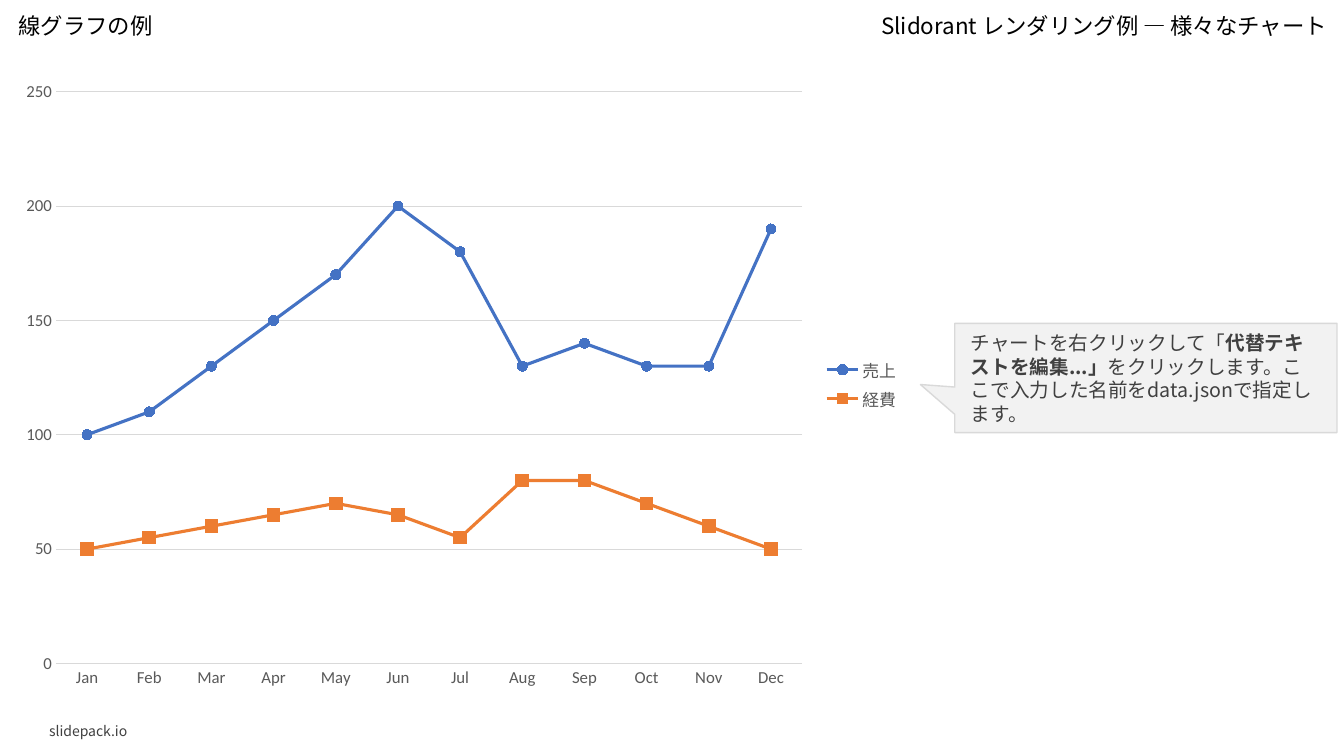
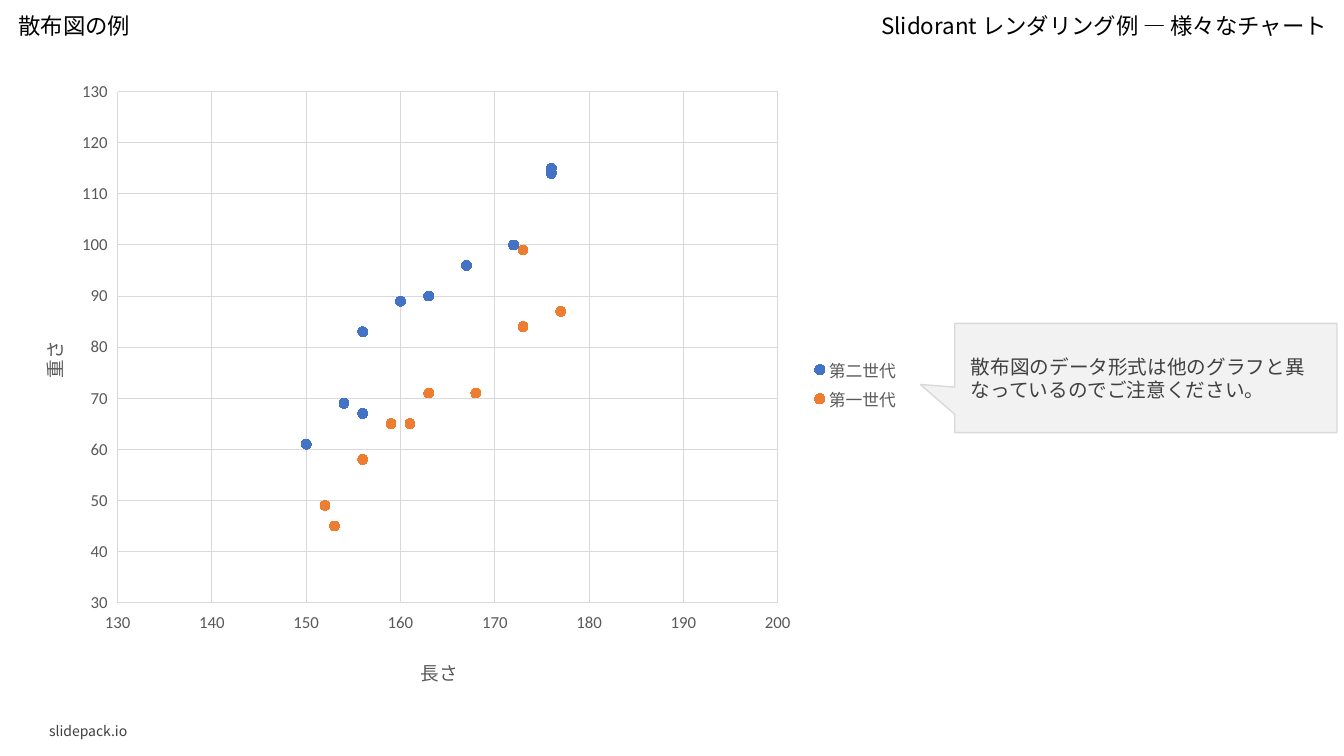
"""Build two slides showing a line chart and a scatter chart, each with a callout."""
from lxml.etree import SubElement
from pptx import Presentation
from pptx.chart.data import CategoryChartData, XyChartData
from pptx.dml.color import RGBColor
from pptx.enum.chart import XL_CHART_TYPE, XL_LEGEND_POSITION, XL_MARKER_STYLE, XL_TICK_MARK
from pptx.enum.shapes import MSO_SHAPE
from pptx.enum.text import MSO_ANCHOR, MSO_AUTO_SIZE, PP_ALIGN
from pptx.oxml import parse_xml
from pptx.oxml.ns import nsdecls, qn
from pptx.util import Pt

COLORS = {
    "black": "000000",
    "text": "404040",
    "axis": "595959",
    "rule": "D9D9D9",
    "panel": "F2F2F2",
    "blue": "4472C4",
    "orange": "ED7D31",
}
FONT = "Noto Sans CJK JP"
CHART_FONT = "Calibri"
CHART_BOX = (6, 49, 644, 451)
DECK_HEADING = "Slidorant レンダリング例 ― 様々なチャート"
FOOTER = "slidepack.io"


def color(name):
    return RGBColor.from_string(COLORS[name])


def add_run(paragraph, text, size=14, tint="text", bold=False):
    run = paragraph.add_run()
    run.text = text
    run.font.size = Pt(size)
    run.font.bold = bold
    run.font.name = FONT
    run.font.color.rgb = color(tint)
    SubElement(run.font._element, qn("a:ea"), typeface=FONT)


def place_in_chart(element, index, **points):
    old_layout = element.find(qn("c:layout"))
    if old_layout is not None:
        element.remove(old_layout)
    layout = parse_xml(f"<c:layout {nsdecls('c')}><c:manualLayout/></c:layout>")
    manual = layout[0]
    if "w" in points:
        SubElement(manual, qn("c:layoutTarget"), val="inner")
    for key in "xy":
        SubElement(manual, qn(f"c:{key}Mode"), val="edge")
    for key, value in points.items():
        extent = CHART_BOX[2] if key in "xw" else CHART_BOX[3]
        SubElement(manual, qn(f"c:{key}"), val=str(value / extent))
    element.insert(index, layout)


class Deck:
    """Hold the shared style and the slide being filled."""

    def __init__(self):
        self.presentation = Presentation()
        self.presentation.slide_width = Pt(960)
        self.presentation.slide_height = Pt(540)
        self.slide = None

    def add_slide(self, title, title_width):
        self.slide = self.presentation.slides.add_slide(self.presentation.slide_layouts[5])
        shape = self.slide.shapes.title
        shape.left, shape.top, shape.width, shape.height = Pt(6), Pt(5), Pt(title_width), Pt(27)
        self.fill_heading(shape, title, PP_ALIGN.LEFT)
        shape = self.slide.shapes.add_textbox(Pt(604), Pt(5), Pt(351), Pt(27))
        self.fill_heading(shape, DECK_HEADING, PP_ALIGN.RIGHT)
        self.add_footer()

    def fill_heading(self, shape, text, alignment):
        frame = shape.text_frame
        frame.word_wrap = False
        frame.auto_size = MSO_AUTO_SIZE.SHAPE_TO_FIT_TEXT
        frame.vertical_anchor = MSO_ANCHOR.TOP
        frame.paragraphs[0].alignment = alignment
        add_run(frame.paragraphs[0], text, size=16, tint="black")

    def add_footer(self):
        shape = self.slide.shapes.add_textbox(Pt(28), Pt(513), Pt(210), Pt(18))
        frame = shape.text_frame
        frame.word_wrap = True
        frame.vertical_anchor = MSO_ANCHOR.MIDDLE
        add_run(frame.paragraphs[0], FOOTER, size=10)

    def add_callout(self, *parts):
        shape = self.slide.shapes.add_shape(
            MSO_SHAPE.RECTANGULAR_CALLOUT, Pt(682), Pt(231), Pt(273), Pt(78))
        shape.adjustments[0] = -0.59
        shape.adjustments[1] = 0.06
        shape.shadow.inherit = False
        shape.fill.solid()
        shape.fill.fore_color.rgb = color("panel")
        shape.line.color.rgb = color("rule")
        shape.line.width = Pt(1)
        frame = shape.text_frame
        frame.word_wrap = True
        frame.vertical_anchor = MSO_ANCHOR.MIDDLE
        frame.margin_left = frame.margin_right = Pt(11.5)
        frame.margin_top = frame.margin_bottom = Pt(11.5)
        paragraph = frame.paragraphs[0]
        paragraph.alignment = PP_ALIGN.LEFT
        for text, bold in parts:
            add_run(paragraph, text, bold=bold)

    def add_chart(self, kind, data, plot_area):
        frame = self.slide.shapes.add_chart(kind, *map(Pt, CHART_BOX), data)
        chart = frame.chart
        chart.has_title = False
        chart.font.name = CHART_FONT
        chart.font.size = Pt(12)
        chart.font.color.rgb = color("axis")
        chart.has_legend = True
        chart.legend.position = XL_LEGEND_POSITION.RIGHT
        chart.legend.include_in_layout = False
        chart.plots[0].vary_by_categories = False
        place_in_chart(chart._chartSpace.chart.plotArea, 0, **plot_area)
        return chart

    def style_axis(self, axis, scale=None, grid=True, line=False, tick=XL_TICK_MARK.NONE):
        if scale:
            axis.minimum_scale, axis.maximum_scale, axis.major_unit = scale
        axis.major_tick_mark = tick
        axis.minor_tick_mark = XL_TICK_MARK.NONE
        axis.has_major_gridlines = grid
        rules = [axis.major_gridlines.format.line] if grid else []
        if line:
            rules.append(axis.format.line)
        else:
            axis.format.line.fill.background()
        for rule in rules:
            rule.color.rgb = color("rule")
            rule.width = Pt(0.75)

    def title_axis(self, axis, text, x, y):
        paragraph = axis.axis_title.text_frame.paragraphs[0]
        add_run(paragraph, text, size=13.3, tint="axis")
        place_in_chart(axis.axis_title._element, 1, x=x, y=y)

    def style_series(self, series, tint, marker=XL_MARKER_STYLE.CIRCLE, size=7, line=False):
        if line:
            series.smooth = False
            series.format.line.color.rgb = color(tint)
            series.format.line.width = Pt(2.25)
        else:
            series.format.line.fill.background()
        series.marker.style = marker
        series.marker.size = size
        series.marker.format.fill.solid()
        series.marker.format.fill.fore_color.rgb = color(tint)
        series.marker.format.line.color.rgb = color(tint)


def build_line_slide(deck):
    deck.add_slide("線グラフの例", 112)
    data = CategoryChartData()
    data.categories = "Jan Feb Mar Apr May Jun Jul Aug Sep Oct Nov Dec".split()
    data.add_series("売上", [100, 110, 130, 150, 170, 200, 180, 130, 140, 130, 130, 190])
    data.add_series("経費", [50, 55, 60, 65, 70, 65, 55, 80, 80, 70, 60, 50])
    chart = deck.add_chart(
        XL_CHART_TYPE.LINE_MARKERS, data, {"x": 34, "y": 16.5, "w": 533, "h": 408.5})
    deck.style_axis(chart.category_axis, grid=False, line=True)
    deck.style_axis(chart.value_axis, (0, 250, 50))
    sales, costs = chart.plots[0].series
    deck.style_series(sales, "blue", line=True)
    deck.style_series(costs, "orange", XL_MARKER_STYLE.SQUARE, 9, line=True)
    deck.add_callout(
        ("チャートを右クリックして「", False),
        ("代替テキストを編集...」", True),
        ("をクリックします。ここで入力した名前をdata.jsonで指定します。", False),
    )


def build_scatter_slide(deck):
    deck.add_slide("散布図の例", 95)
    generations = {
        "第二世代": [(150, 61), (156, 67), (154, 69), (156, 83), (160, 89),
                 (163, 90), (172, 100), (167, 96), (176, 115), (176, 114)],
        "第一世代": [(153, 45), (156, 58), (152, 49), (159, 65), (163, 71),
                 (161, 65), (168, 71), (173, 84), (177, 87), (173, 99)],
    }
    data = XyChartData()
    for name, points in generations.items():
        series = data.add_series(name)
        for x, y in points:
            series.add_data_point(x, y)
    chart = deck.add_chart(
        XL_CHART_TYPE.XY_SCATTER, data, {"x": 78, "y": 16.5, "w": 471.5, "h": 365})
    deck.style_axis(chart.category_axis, (130, 200, 10), tick=XL_TICK_MARK.OUTSIDE)
    deck.style_axis(chart.value_axis, (30, 130, 10), tick=XL_TICK_MARK.OUTSIDE)
    deck.title_axis(chart.category_axis, "長さ", 292, 417)
    deck.title_axis(chart.value_axis, "重さ", 19, 192)
    for series, tint in zip(chart.plots[0].series, ("blue", "orange")):
        deck.style_series(series, tint)
    deck.add_callout(("散布図のデータ形式は他のグラフと異なっているのでご注意ください。", False))


def main():
    deck = Deck()
    build_line_slide(deck)
    build_scatter_slide(deck)
    deck.presentation.save("out.pptx")


if __name__ == "__main__":
    main()
